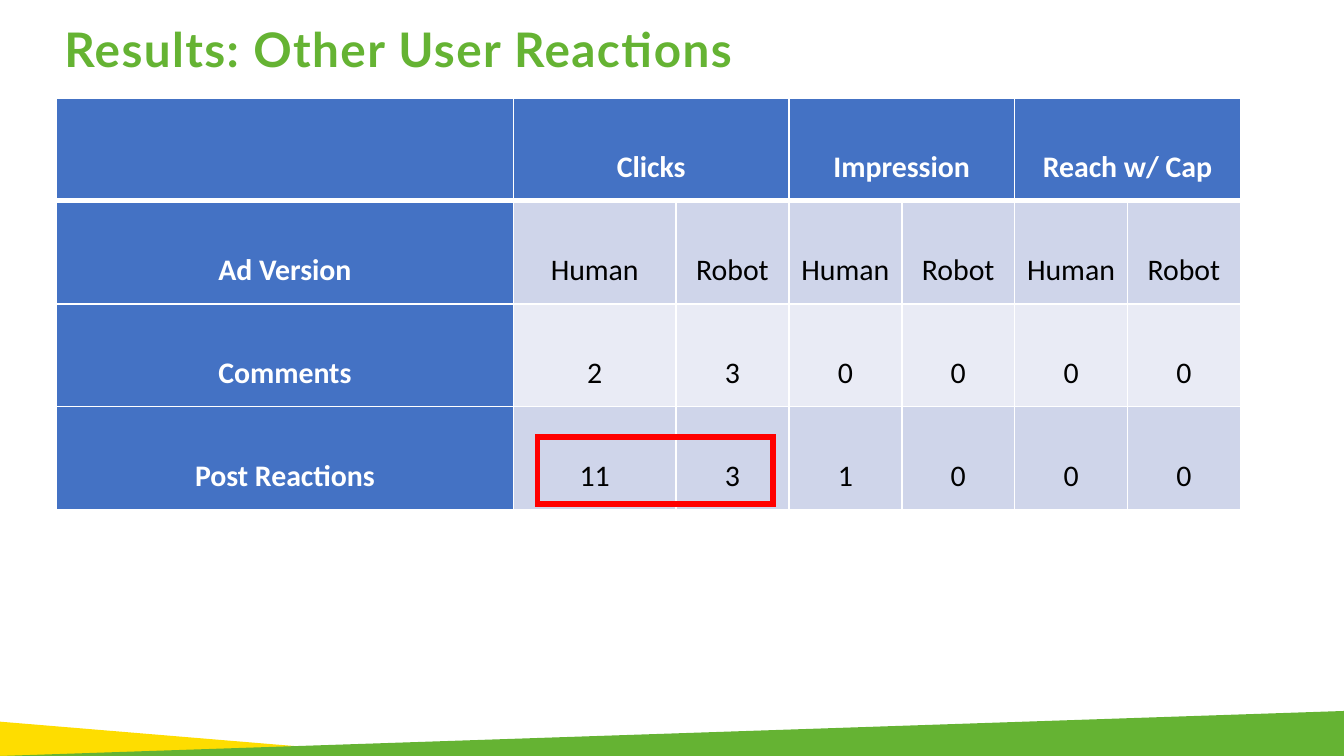
from dataclasses import dataclass

from lxml import etree
from pptx import Presentation
from pptx.dml.color import RGBColor
from pptx.enum.shapes import MSO_SHAPE
from pptx.enum.text import MSO_ANCHOR, PP_ALIGN
from pptx.oxml.ns import qn
from pptx.util import Inches, Pt

RECTANGLE = MSO_SHAPE.RECTANGLE
MIDDLE = MSO_ANCHOR.MIDDLE
CENTER = PP_ALIGN.CENTER

SLIDE_WIDTH = 10
SLIDE_HEIGHT = SLIDE_WIDTH * 9 / 16

GREEN, YELLOW, RED = "65B333", "FEDD00", "FF0000"
BLUE, WHITE, BLACK = "4472C4", "FFFFFF", "000000"
BANDS = ("CFD5EA", "E9EBF5")

COLUMN_WIDTHS = [3.4, 1.21] + [0.84] * 5
TABLE_HEIGHT = 3.06
ROWS = [
    ["", "Clicks", "", "Impression", "", "Reach w/ Cap", ""],
    ["Ad Version"] + ["Human", "Robot"] * 3,
    ["Comments", "2", "3", "0", "0", "0", "0"],
    ["Post Reactions", "11", "3", "1", "0", "0", "0"],
]


@dataclass
class Wedge:
    color: str
    points: list[tuple[float, float]]


WEDGES = [
    Wedge(YELLOW, [(0, 5.37), (3.08, SLIDE_HEIGHT), (0, SLIDE_HEIGHT)]),
    Wedge(GREEN, [(SLIDE_WIDTH, 5.29), (SLIDE_WIDTH, SLIDE_HEIGHT), (0, SLIDE_HEIGHT)]),
]


def rgb(color: str) -> RGBColor:
    return RGBColor.from_string(color)


def draw_wedge(slide, wedge: Wedge) -> None:
    start, *rest = [(Inches(x), Inches(y)) for x, y in wedge.points]
    builder = slide.shapes.build_freeform(*start)
    builder.add_line_segments(rest)
    sp = builder.convert_to_shape()
    sp.shadow.inherit = False
    sp.fill.solid()
    sp.fill.fore_color.rgb = rgb(wedge.color)
    sp.line.fill.background()


def format_run(r, font: str, size: float, color: str, bold: bool) -> None:
    r.font.name = font
    r.font.size = Pt(size)
    r.font.bold = bold
    r.font.color.rgb = rgb(color)


def draw_title(slide, text: str) -> None:
    box = slide.shapes.add_textbox(Inches(0.38), Inches(0.15), Inches(8.71), Inches(0.6))
    tf = box.text_frame
    tf.word_wrap = True
    tf.text = text
    p = tf.paragraphs[0]
    p.line_spacing = 0.9
    p.space_before = Pt(10)
    r = p.runs[0]
    format_run(r, "Lato", 25.5, GREEN, True)
    r.font._element.set("spc", "75")


def set_borders(cell, top: int, bottom: int) -> None:
    """Give the cell white edges; widths are in points. Call before filling."""
    tc_pr = cell._tc.get_or_add_tcPr()
    for tag, width in (("a:lnL", 1), ("a:lnR", 1), ("a:lnT", top), ("a:lnB", bottom)):
        ln = etree.SubElement(tc_pr, qn(tag), w=str(Pt(width)))
        fill = etree.SubElement(ln, qn("a:solidFill"))
        etree.SubElement(fill, qn("a:srgbClr"), val=WHITE)


def format_cell(cell, text: str, row: int, column: int) -> None:
    is_header = row == 0 or column == 0
    set_borders(cell, top=3 if row == 1 else 1, bottom=3 if row == 0 else 1)
    cell.fill.solid()
    cell.fill.fore_color.rgb = rgb(BLUE if is_header else BANDS[(row - 1) % 2])
    if not text:
        return
    cell.vertical_anchor = MIDDLE
    cell.margin_left = cell.margin_right = Inches(0.07)
    cell.margin_top = cell.margin_bottom = 0
    cell.text_frame.text = text
    p = cell.text_frame.paragraphs[0]
    p.alignment = CENTER
    p.line_spacing = 2.0
    format_run(p.runs[0], "Calibri", 16, WHITE if is_header else BLACK, is_header)


def draw_results_table(slide) -> None:
    table = slide.shapes.add_table(
        len(ROWS), len(COLUMN_WIDTHS), Inches(0.42), Inches(0.73),
        Inches(sum(COLUMN_WIDTHS)), Inches(TABLE_HEIGHT),
    ).table
    for column, width in zip(table.columns, COLUMN_WIDTHS):
        column.width = Inches(width)
    for i, texts in enumerate(ROWS):
        table.rows[i].height = Inches(TABLE_HEIGHT / len(ROWS))
        for j, text in enumerate(texts):
            format_cell(table.cell(i, j), text, i, j)
    for j in (1, 3, 5):
        table.cell(0, j).merge(table.cell(0, j + 1))


def draw_highlight(slide) -> None:
    sp = slide.shapes.add_shape(RECTANGLE, Inches(4), Inches(3.25), Inches(1.75), Inches(0.5))
    sp.shadow.inherit = False
    sp.fill.background()
    sp.line.color.rgb = rgb(RED)
    sp.line.width = Pt(3)
    etree.SubElement(sp.line._get_or_add_ln(), qn("a:miter"), lim="800000")


def main() -> None:
    prs = Presentation()
    prs.slide_width = Inches(SLIDE_WIDTH)
    prs.slide_height = Inches(SLIDE_HEIGHT)
    slide = prs.slides.add_slide(prs.slide_layouts[6])
    for wedge in WEDGES:
        draw_wedge(slide, wedge)
    draw_title(slide, "Results: Other User Reactions")
    draw_results_table(slide)
    draw_highlight(slide)
    prs.save("out.pptx")


if __name__ == "__main__":
    main()
